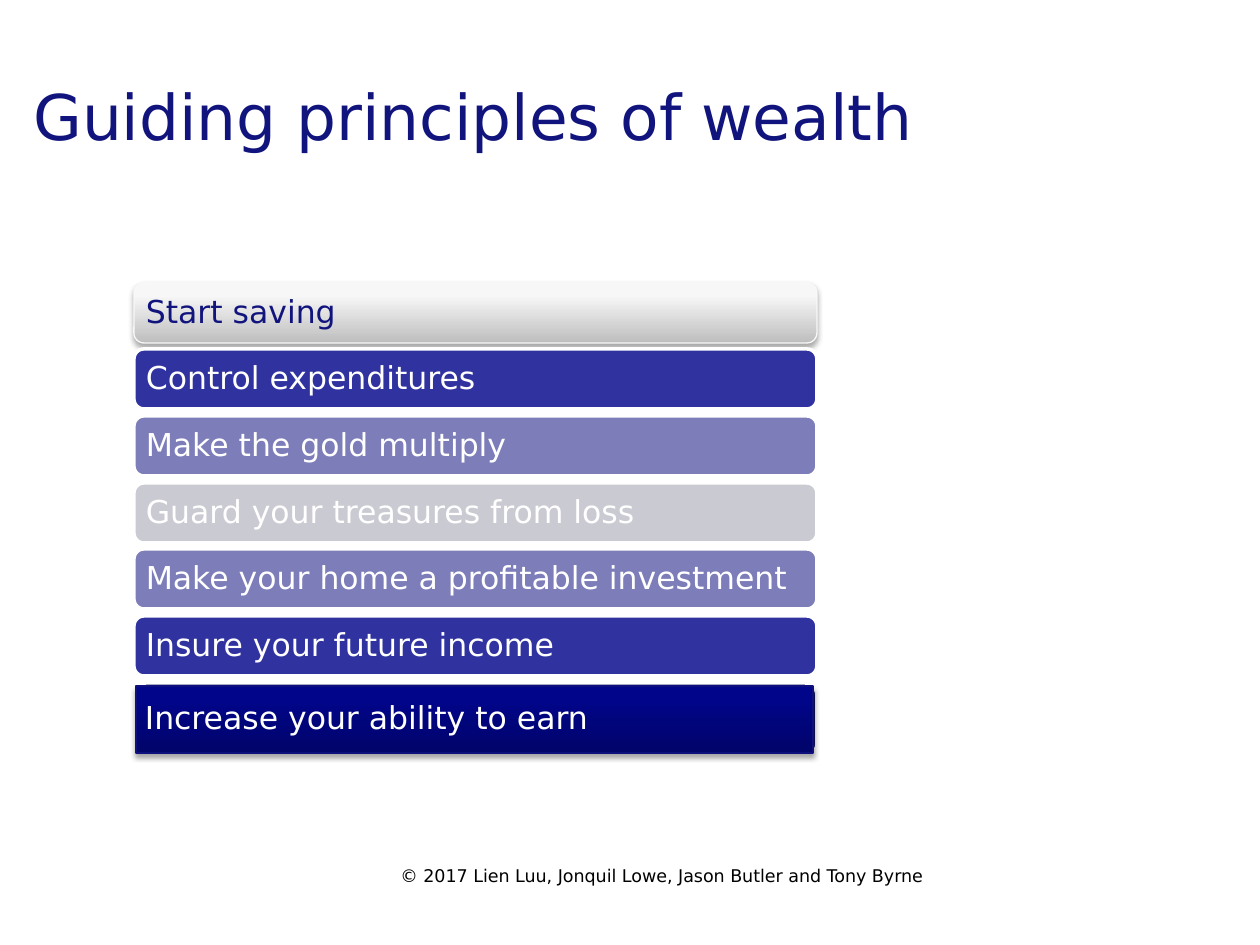
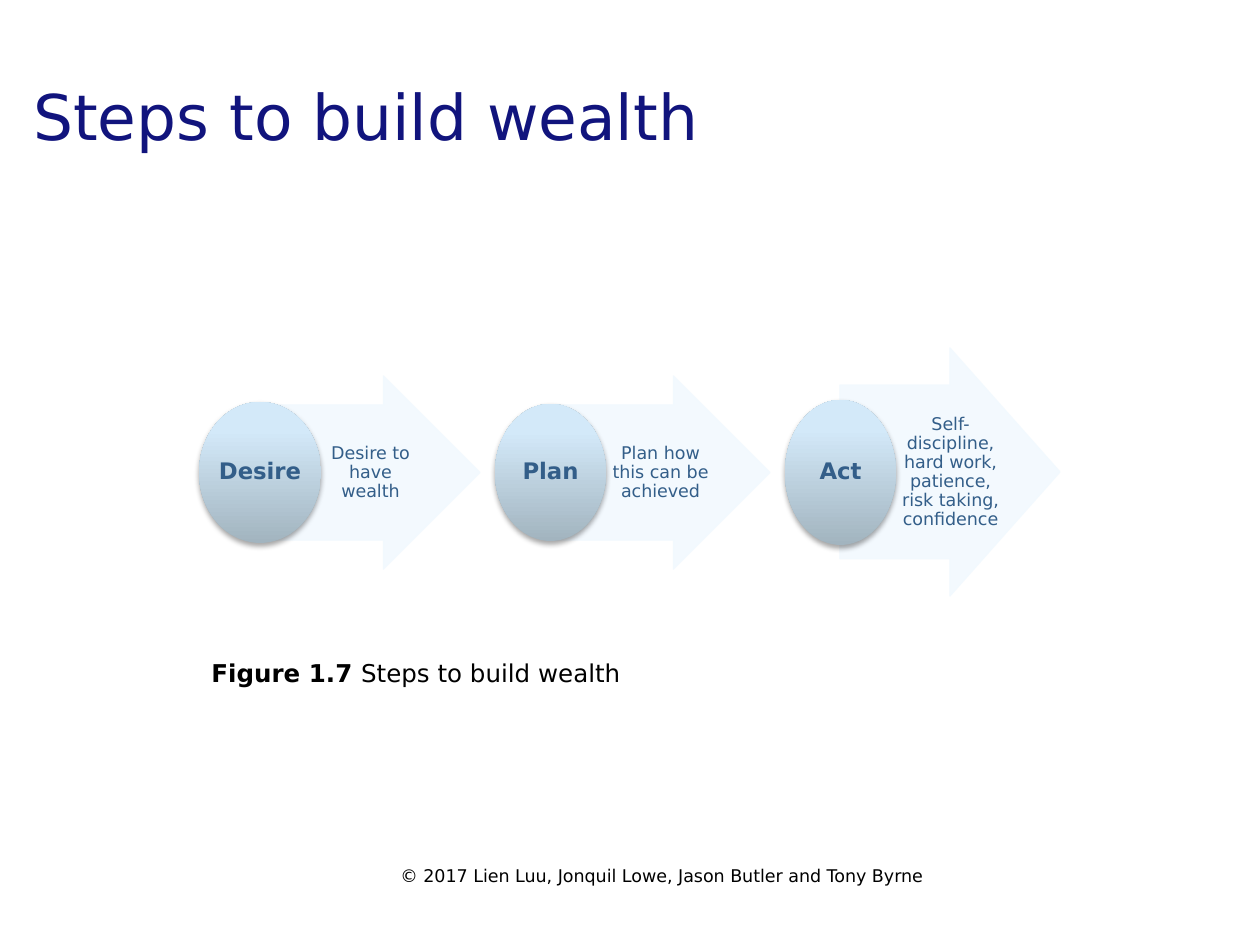
"""Build two slides on the principles of wealth and the steps to build it."""
from copy import deepcopy

from lxml.etree import SubElement
from pptx import Presentation
from pptx.dml.color import RGBColor
from pptx.enum.shapes import MSO_SHAPE
from pptx.enum.text import MSO_ANCHOR, PP_ALIGN
from pptx.oxml.ns import qn
from pptx.util import Emu, Pt

PX = 914400 / 126
FONT = "DejaVu Sans"
INK = RGBColor(0x11, 0x14, 0x7D)
BLACK = RGBColor(0x00, 0x00, 0x00)
WHITE = RGBColor(0xFF, 0xFF, 0xFF)
INDIGO = RGBColor(0x30, 0x33, 0x9F)
LAVENDER = RGBColor(0x7C, 0x7D, 0xB9)
MIST = RGBColor(0xCA, 0xCA, 0xD2)
MIDNIGHT = RGBColor(0x0D, 0x0F, 0x5C)
SILVER_EDGE = RGBColor(0xF9, 0xF9, 0xF9)
NAVY_EDGE = RGBColor(0x0E, 0x11, 0x7D)
STEEL = RGBColor(0x33, 0x5E, 0x89)
ICE = RGBColor(0xF2, 0xF9, 0xFE)
SILVER_FADE = (RGBColor(0xBE, 0xBE, 0xBE), RGBColor(0xF7, 0xF7, 0xF7), RGBColor(0xF8, 0xF8, 0xF8))
NAVY_FADE = (RGBColor(0x01, 0x04, 0x69), RGBColor(0x01, 0x05, 0x89), RGBColor(0x00, 0x04, 0x8A))
SKY_FADE = (RGBColor(0xA2, 0xB4, 0xBF), RGBColor(0xD3, 0xE9, 0xF9), RGBColor(0xD3, 0xEB, 0xFA))
FADE_POSITIONS = (0, 0.8, 1)

FOOTER = "© 2017 Lien Luu, Jonquil Lowe, Jason Butler and Tony Byrne"
PRINCIPLES = (
    ("Start saving", SILVER_FADE),
    ("Control expenditures", INDIGO),
    ("Make the gold multiply", LAVENDER),
    ("Guard your treasures from loss", MIST),
    ("Make your home a profitable investment", LAVENDER),
    ("Insure your future income", INDIGO),
)
STEPS = (
    ("Desire", "Desire to have wealth", 193, 122, 141),
    ("Plan", "Plan how this can be achieved", 193, 111, 137),
    ("Act", "Self-discipline, hard work, patience, risk taking, confidence", 248, 111, 145),
)


def px(length):
    """Turn a length in px into EMU."""
    return Emu(round(length * PX))


def box(left, top, width, height):
    """Return a frame in EMU."""
    return px(left), px(top), px(width), px(height)


def write(holder, runs, size, color, align=PP_ALIGN.LEFT, spacing=None, margins=None):
    """Write (text, bold) runs as one paragraph, centred vertically."""
    frame = holder.text_frame
    frame.word_wrap = True
    frame.vertical_anchor = MSO_ANCHOR.MIDDLE
    if margins:
        (frame.margin_left, frame.margin_top,
         frame.margin_right, frame.margin_bottom) = map(px, margins)
    line = frame.paragraphs[0]
    line.alignment = align
    line.line_spacing = spacing
    for text, bold in runs:
        run = line.add_run()
        run.text = text
        run.font.name = FONT
        run.font.size = Pt(size)
        run.font.bold = bold
        run.font.color.rgb = color
    return frame


def add_text(slide, frame, runs, size, color, **style):
    """Add a text box and return its text frame."""
    return write(slide.shapes.add_textbox(*box(*frame)), runs, size, color, **style)


def fade(shape, colors):
    """Fill a shape with a gradient that runs from bottom to top."""
    shape.fill.gradient()
    shape.fill.gradient_angle = 90
    stops = next(shape._element.spPr.iter(qn("a:gsLst")))
    stops.append(deepcopy(stops[-1]))
    for stop, position, color in zip(shape.fill.gradient_stops, FADE_POSITIONS, colors):
        stop.position = position
        stop.color.rgb = color


def cast_shadow(shape):
    """Add a soft shadow below a shape."""
    effects = shape._element.spPr.find(qn("a:effectLst"))
    shadow = SubElement(effects, qn("a:outerShdw"), blurRad=str(Pt(3.1)),
                        dist=str(Pt(1.8)), dir="5400000", rotWithShape="0")
    tint = SubElement(shadow, qn("a:srgbClr"), val=str(BLACK))
    SubElement(tint, qn("a:alpha"), val="35000")


def add_shape(slide, kind, frame, fill, edge=None, edge_width=0.75):
    """Add a shape; a gradient fill also brings a shadow."""
    shape = slide.shapes.add_shape(kind, *box(*frame))
    shape.shadow.inherit = False
    if isinstance(fill, RGBColor):
        shape.fill.solid()
        shape.fill.fore_color.rgb = fill
    else:
        fade(shape, fill)
        cast_shadow(shape)
    if edge is None:
        shape.line.fill.background()
    else:
        shape.line.color.rgb = edge
        shape.line.width = Pt(edge_width)
    return shape


def add_titled_slide(deck, title):
    """Add a blank slide with the shared title and footer."""
    slide = deck.slides.add_slide(deck.slide_layouts[6])
    add_text(slide, (21, 42, 1187, 147), [(title, False)], 36, INK)
    add_text(slide, (388, 851, 751, 50), [(FOOTER, False)], 10, BLACK)
    return slide


def label_bar(bar, text, color):
    """Write the principle on its bar."""
    write(bar, [(text, False)], 18, color, spacing=0.9, margins=(9, 9, 9, 9))


def add_principles(slide):
    """Stack the principles as bars, the last one taller."""
    for row, (text, fill) in enumerate(PRINCIPLES):
        first = row == 0
        bar = add_shape(slide, MSO_SHAPE.ROUNDED_RECTANGLE,
                        (134, 283 + 200 * row // 3, 683, 60), fill,
                        SILVER_EDGE if first else WHITE, 0.75 if first else 2)
        label_bar(bar, text, INK if first else WHITE)
    add_shape(slide, MSO_SHAPE.ROUNDED_RECTANGLE, (134, 683, 683, 73), MIDNIGHT, WHITE, 2)
    goal = add_shape(slide, MSO_SHAPE.RECTANGLE, (136, 686, 677, 67), NAVY_FADE, NAVY_EDGE)
    label_bar(goal, "Increase your ability to earn", WHITE)


def add_step(slide, arrow_left, name, detail, arrow_height, oval_width, oval_height):
    """Add one step: an arrow with its detail and an oval with its name."""
    middle = 472
    arrow = add_shape(slide, MSO_SHAPE.RIGHT_ARROW,
                      (arrow_left, middle - arrow_height // 2, 220, arrow_height), ICE, ICE)
    arrow.adjustments[0] = 0.7
    arrow.adjustments[1] = 0.5
    for tint in list(arrow._element.spPr.iter(qn("a:srgbClr"))):
        SubElement(tint, qn("a:alpha"), val="90000")
    detail_height = arrow_height * 7 // 10
    add_text(slide, (arrow_left + 55, middle - detail_height // 2, 108, detail_height),
             [(detail, False)], 10, STEEL, align=PP_ALIGN.CENTER, spacing=0.9,
             margins=(4, 1, 1, 1))
    oval = add_shape(slide, MSO_SHAPE.OVAL,
                     (arrow_left - oval_width // 2, middle - oval_height // 2,
                      oval_width, oval_height), SKY_FADE)
    write(oval, [(name, True)], 13, STEEL, align=PP_ALIGN.CENTER, spacing=0.9,
          margins=(1, 1, 1, 1))


def main():
    """Build and save the deck."""
    deck = Presentation()
    deck.slide_width, deck.slide_height = px(1260), px(945)

    add_principles(add_titled_slide(deck, "Guiding principles of wealth"))

    title = "Steps to build wealth"
    steps_slide = add_titled_slide(deck, title)
    for place, step in enumerate(STEPS):
        add_step(steps_slide, 260 + 290 * place, *step)
    caption = add_text(steps_slide, (199, 651, 437, 43),
                       [("Figure 1.7 ", True), (title, False)], 14, BLACK)
    caption.word_wrap = False

    deck.save("out.pptx")


if __name__ == "__main__":
    main()
